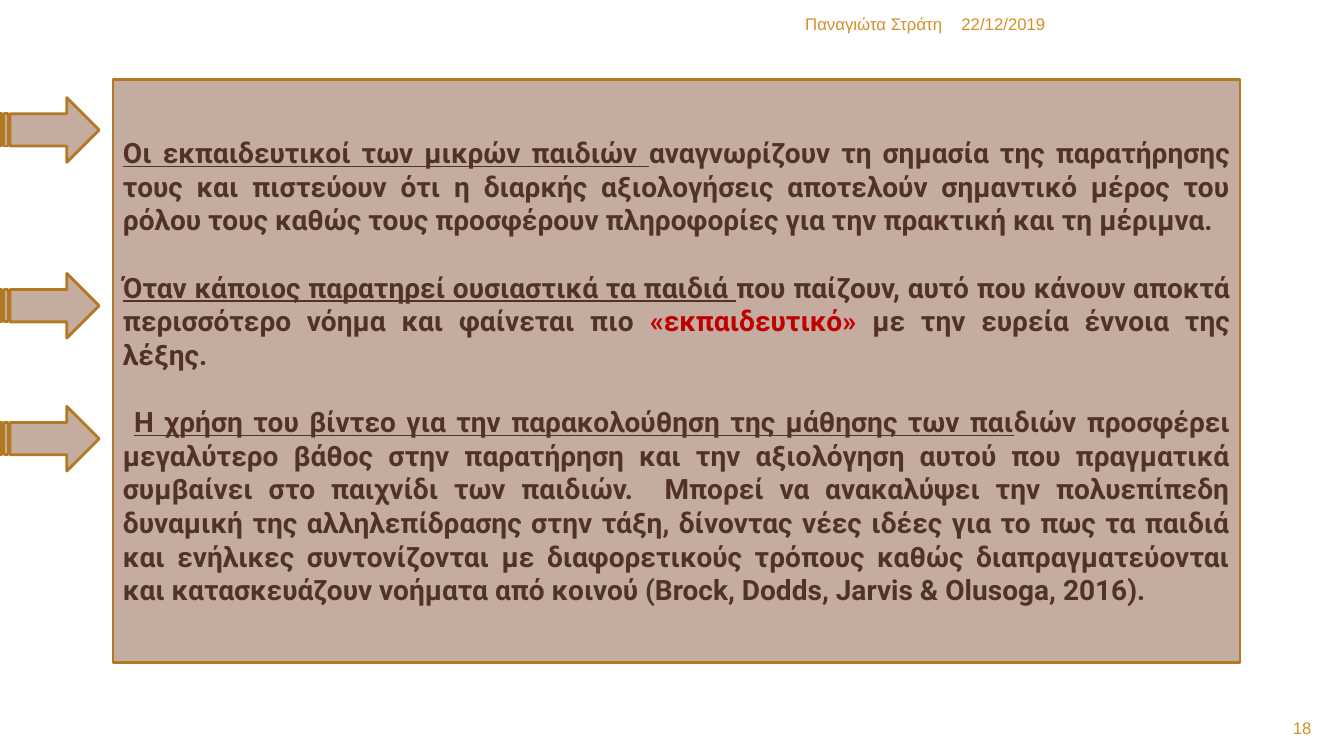
from pptx import Presentation
from pptx.dml.color import RGBColor
from pptx.enum.shapes import MSO_SHAPE
from pptx.enum.text import MSO_ANCHOR, PP_ALIGN
from pptx.util import Cm, Pt

BROWN = "523227"
RED = "C00000"
FILL = "C4ADA0"
BORDER = "B27822"
GOLD = "D48F29"

# Each paragraph is a list of (text, underlined, colour)
STATEMENTS = [
    [("Oι εκπαιδευτικοί των μικρών παιδιών ", True, BROWN),
     ("αναγνωρίζουν τη σημασία της παρατήρησης τους και πιστεύουν ότι η διαρκής "
      "αξιολογήσεις αποτελούν σημαντικό μέρος του ρόλου τους καθώς τους προσφέρουν "
      "πληροφορίες για την πρακτική και τη μέριμνα.", False, BROWN)],
    [("Όταν κάποιος παρατηρεί ουσιαστικά τα παιδιά ", True, BROWN),
     ("που παίζουν, αυτό που κάνουν αποκτά περισσότερο νόημα και φαίνεται πιο ",
      False, BROWN),
     ("«εκπαιδευτικό» ", False, RED),
     ("με την ευρεία έννοια της λέξης.", False, BROWN)],
    [("Η χρήση του βίντεο για την παρακολούθηση της μάθησης των παι", True, BROWN),
     ("διών προσφέρει μεγαλύτερο βάθος στην παρατήρηση και την αξιολόγηση αυτού που "
      "πραγματικά συμβαίνει στο παιχνίδι των παιδιών.  Μπορεί να ανακαλύψει την "
      "πολυεπίπεδη δυναμική της αλληλεπίδρασης στην τάξη, δίνοντας νέες ιδέες για το "
      "πως τα παιδιά και ενήλικες συντονίζονται με διαφορετικούς τρόπους καθώς "
      "διαπραγματεύονται και κατασκευάζουν νοήματα από κοινού "
      "(Brock, Dodds, Jarvis & Olusoga, 2016).", False, BROWN)],
]
ARROW_TOPS = (2.46, 6.89, 10.24)


def color(hex_value):
    return RGBColor.from_string(hex_value)


def add_outlined_shape(slide, kind, left, top, width, height):
    shape = slide.shapes.add_shape(kind, Cm(left), Cm(top), Cm(width), Cm(height))
    shape.shadow.inherit = False
    shape.fill.solid()
    shape.fill.fore_color.rgb = color(FILL)
    shape.line.color.rgb = color(BORDER)
    shape.line.width = Pt(2)
    return shape


def add_statements(shape, statements):
    frame = shape.text_frame
    frame.word_wrap = True
    frame.vertical_anchor = MSO_ANCHOR.MIDDLE
    for index, parts in enumerate(statements):
        paragraph = frame.paragraphs[0] if index == 0 else frame.add_paragraph()
        paragraph.alignment = PP_ALIGN.JUSTIFY
        paragraph.space_before = Pt(24 if index else 0)
        paragraph.font.name = "Roboto"
        paragraph.font.size = Pt(20)
        paragraph.font.bold = True
        for text, underlined, hex_value in parts:
            run = paragraph.add_run()
            run.text = text
            run.font.underline = underlined
            run.font.color.rgb = color(hex_value)
    # The last statement starts slightly indented
    paragraph._p.get_or_add_pPr().set("indent", str(Cm(0.28)))


def add_label(slide, text, left, top, width, height, alignment):
    frame = slide.shapes.add_textbox(Cm(left), Cm(top), Cm(width), Cm(height)).text_frame
    frame.word_wrap = True
    frame.vertical_anchor = MSO_ANCHOR.MIDDLE
    paragraph = frame.paragraphs[0]
    paragraph.text = text
    paragraph.alignment = alignment
    paragraph.font.name = "Arial"
    paragraph.font.size = Pt(12)
    paragraph.font.color.rgb = color(GOLD)


def main():
    presentation = Presentation()
    presentation.slide_width = Cm(33.87)
    presentation.slide_height = Cm(19.05)
    slide = presentation.slides.add_slide(presentation.slide_layouts[6])

    # Statement panel
    panel = add_outlined_shape(slide, MSO_SHAPE.RECTANGLE, 2.85, 2, 28.4, 14.7)
    add_statements(panel, STATEMENTS)

    # One arrow per statement
    for top in ARROW_TOPS:
        add_outlined_shape(slide, MSO_SHAPE.STRIPED_RIGHT_ARROW, 0, top, 2.5, 1.63)

    # Author, date and slide number
    add_label(slide, "Παναγιώτα Στράτη", 11.58, 0.2, 12.42, 0.82, PP_ALIGN.RIGHT)
    add_label(slide, "22/12/2019", 23.98, 0.2, 9.32, 0.82, PP_ALIGN.LEFT)
    add_label(slide, "18", 30.48, 18, 2.82, 0.7, PP_ALIGN.RIGHT)

    presentation.save("out.pptx")


if __name__ == "__main__":
    main()
